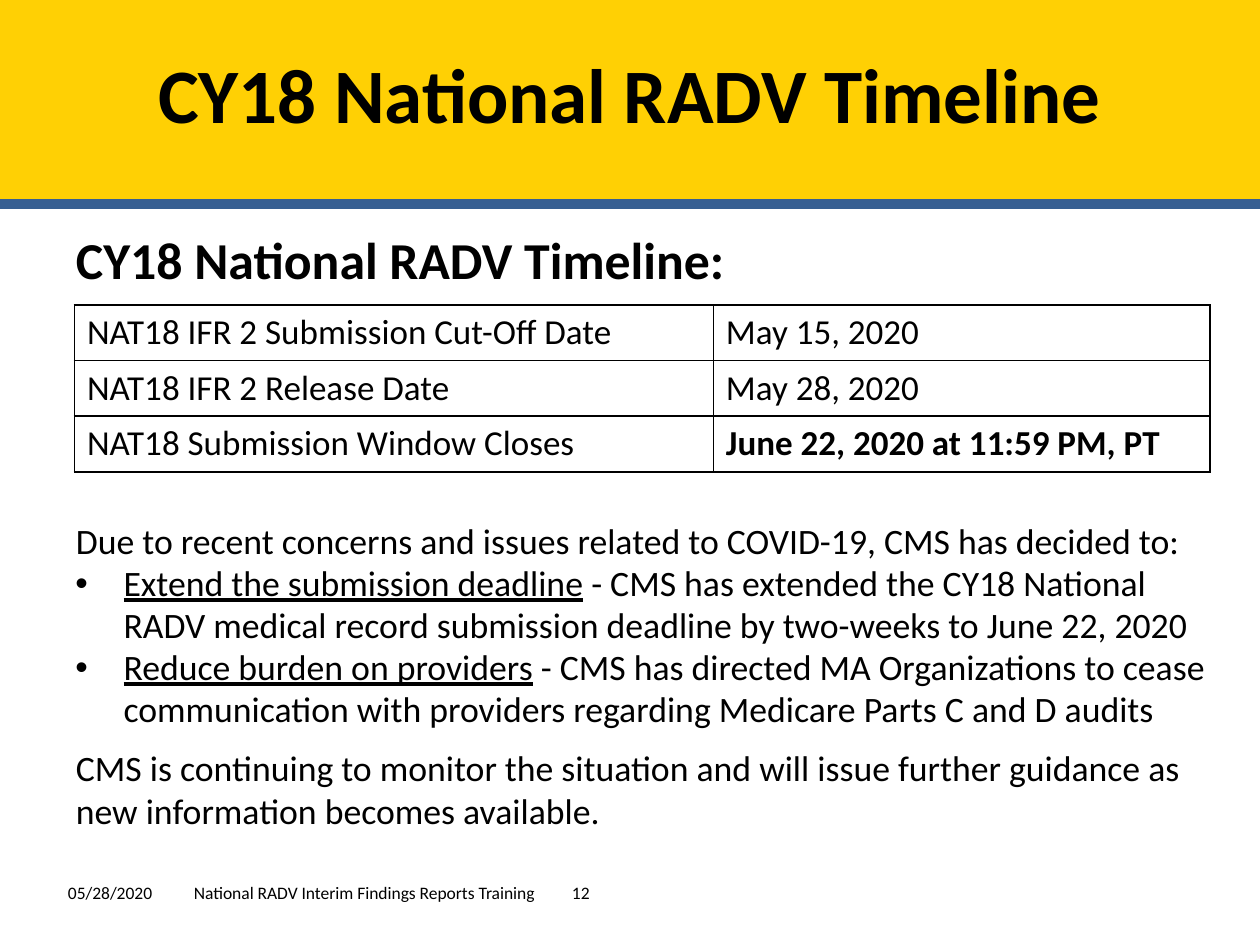
from lxml.etree import SubElement as Sub
from pptx import Presentation
from pptx.dml.color import RGBColor as Rgb
from pptx.enum.shapes import MSO_CONNECTOR as Link, MSO_SHAPE as Kind
from pptx.enum.text import MSO_ANCHOR as Anchor, MSO_AUTO_SIZE as Fit, PP_ALIGN as Align
from pptx.oxml.ns import qn
from pptx.util import Cm, Pt

HUES = {"gold": "FFD004", "blue": "375F92", "ink": "000000"}
FACE = "Calibri"
DATES = [
    ("NAT18 IFR 2 Submission Cut-Off Date", "May 15, 2020"),
    ("NAT18 IFR 2 Release Date", "May 28, 2020"),
    ("NAT18 Submission Window Closes", "June 22, 2020 at 11:59 PM, PT"),
]
STEPS = [
    ("Extend the submission deadline",
     " - CMS has extended the CY18 National RADV medical record submission "
     "deadline by two-weeks to June 22, 2020"),
    ("Reduce burden on providers",
     " - CMS has directed MA Organizations to cease communication with "
     "providers regarding Medicare Parts C and D audits"),
]


def hue(name):
    """Return a named colour."""
    return Rgb.from_string(HUES[name])


def style(para, size, bold=False):
    """Format every run of a paragraph."""
    for run in para.runs:
        font = run.font
        font.name, font.size, font.bold = FACE, Pt(size), bold
        font.color.rgb = hue("ink")


def place(shape, left, top, width, height):
    """Move a text shape and clear its insets."""
    shape.left, shape.top = Cm(left), Cm(top)
    shape.width, shape.height = Cm(width), Cm(height)
    frame = shape.text_frame
    frame.margin_left = frame.margin_right = 0
    frame.margin_top = frame.margin_bottom = 0
    frame.word_wrap, frame.auto_size = True, Fit.NONE
    frame.vertical_anchor = Anchor.TOP
    return frame


def indent(para, left, hang=0, mark=None):
    """Set the indent and bullet of a paragraph."""
    props = para._p.get_or_add_pPr()
    props.set("marL", str(Cm(left)))
    props.set("indent", str(Cm(-hang)))
    if mark:
        Sub(props, qn("a:buFont"), typeface="Arial")
        Sub(props, qn("a:buChar"), char=mark)
    else:
        Sub(props, qn("a:buNone"))


def add_band(slide):
    """Draw the header band and its rule behind the text."""
    rule = slide.shapes.add_connector(Link.STRAIGHT, 0, Cm(4.11), Cm(25.4), Cm(4.11))
    rule.line.color.rgb, rule.line.width = hue("blue"), Pt(6)
    Sub(rule._element.spPr, qn("a:effectLst"))
    band = slide.shapes.add_shape(Kind.RECTANGLE, 0, 0, Cm(25.4), Cm(4.01))
    band.shadow.inherit = False
    band.fill.solid()
    band.fill.fore_color.rgb = hue("gold")
    band.line.fill.background()
    for spot, item in enumerate((rule, band), 2):
        slide.shapes._spTree.insert(spot, item._element)


def set_title(slide):
    """Fill the title."""
    frame = place(slide.shapes.title, 0, 0.94, 25.4, 1.88)
    frame.text = "CY18 National RADV Timeline"
    para = frame.paragraphs[0]
    para.alignment = Align.CENTER
    style(para, 44, True)


def add_para(frame, parts, size=20.4, gap=0, bold=False):
    """Append a body paragraph made of runs."""
    para = frame.paragraphs[0]
    if para.runs:
        para = frame.add_paragraph()
    for part in parts:
        para.add_run().text = part
    para.space_before, para.space_after = Pt(gap), Pt(0)
    para.line_spacing = 0.98
    style(para, size, bold)
    return para


def set_body(slide):
    """Fill the body with its heading, text and bullets."""
    frame = place(slide.placeholders[1], 1.5, 4.65, 23.29, 12.55)
    head = add_para(frame, ["CY18 National RADV Timeline:"], 29.6, bold=True)
    lead = add_para(frame, ["Due to recent concerns and issues related to "
                            "COVID-19, CMS has decided to:"], gap=131)
    for step in STEPS:
        para = add_para(frame, step)
        para.runs[0].font.underline = True
        indent(para, 0.99, 0.97, "•")
    last = add_para(frame, ["CMS is continuing to monitor the situation and will issue "
                            "further guidance as new information becomes available."], gap=10)
    for para in (head, lead, last):
        indent(para, 0.03)


def add_edge(cell):
    """Draw a thin line on each side of a cell."""
    props = cell._tc.get_or_add_tcPr()
    for spot, side in enumerate(("lnL", "lnR", "lnT", "lnB")):
        line = Sub(props, qn(f"a:{side}"), w=str(Pt(1)))
        Sub(Sub(line, qn("a:solidFill")), qn("a:srgbClr"), val=HUES["ink"])
        props.insert(spot, line)


def add_dates(slide):
    """Add the table of dates."""
    table = slide.shapes.add_table(3, 2, Cm(1.5), Cm(6.15), Cm(22.89), Cm(3.36)).table
    table.first_row = table.horz_banding = False
    for col, width in zip(table.columns, (12.88, 10.01)):
        col.width = Cm(width)
    for row, texts in zip(table.rows, DATES):
        row.height = Cm(1.12)
        for cell, text in zip(row.cells, texts):
            cell.text = text
            cell.fill.background()
            cell.vertical_anchor = Anchor.MIDDLE
            style(cell.text_frame.paragraphs[0], 20, text.startswith("June"))
            add_edge(cell)


def add_foot(slide):
    """Add the footer line, spaced with tab stops."""
    box = slide.shapes.add_textbox(0, 0, 0, 0)
    frame = place(box, 1.07, 17.78, 23.06, 0.43)
    frame.text = "05/28/2020\tNational RADV Interim Findings Reports Training\t12"
    para = frame.paragraphs[0]
    style(para, 10)
    indent(para, 0.3)
    tabs = Sub(para._p.pPr, qn("a:tabLst"))
    for stop in (9.32, 22.05):
        Sub(tabs, qn("a:tab"), pos=str(Cm(stop)), algn="l")


def main():
    """Build and save the slide."""
    deck = Presentation()
    deck.slide_width, deck.slide_height = Cm(25.4), Cm(19.05)
    slide = deck.slides.add_slide(deck.slide_layouts[1])
    add_band(slide)
    set_body(slide)
    add_foot(slide)
    set_title(slide)
    add_dates(slide)
    deck.save("out.pptx")


if __name__ == "__main__":
    main()
